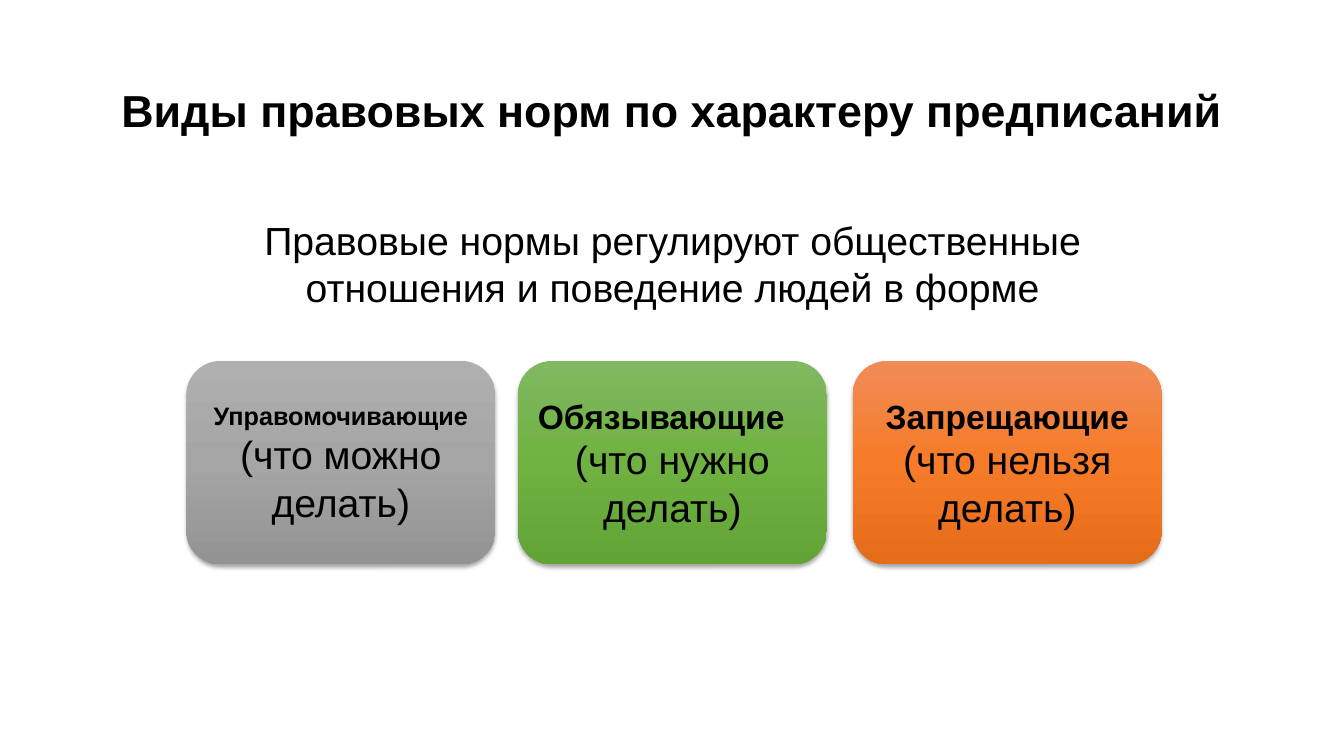
from copy import deepcopy

from lxml import etree
from pptx import Presentation
from pptx.dml.color import RGBColor
from pptx.enum.shapes import MSO_SHAPE
from pptx.enum.text import MSO_ANCHOR, MSO_AUTO_SIZE, PP_ALIGN
from pptx.oxml.ns import qn
from pptx.util import Pt

ROUNDED = MSO_SHAPE.ROUNDED_RECTANGLE
MIDDLE = MSO_ANCHOR.MIDDLE
LEFT, CENTER = PP_ALIGN.LEFT, PP_ALIGN.CENTER
FIT_SHAPE, NO_FIT = MSO_AUTO_SIZE.SHAPE_TO_FIT_TEXT, MSO_AUTO_SIZE.NONE
TITLE_ONLY = 5
FONT = "Arial"
BLACK = "000000"

CARD_TOP, CARD_WIDTH, CARD_HEIGHT = 257.8, 220.6, 145.4
# left, gradient colours, heading, heading size, heading alignment, explanation
CARDS = [
    (133.2, ("AFAFAF", "A5A5A5", "939393"),
     "Управомочивающие", 18, CENTER, "(что можно делать)"),
    (370, ("81B861", "6FB242", "62A336"),
     "Обязывающие", 24, LEFT, "(что нужно делать)"),
    (609.2, ("F18C57", "F67B28", "E56C19"),
     "Запрещающие", 24, CENTER, "(что нельзя делать)"),
]


def color(hex_value):
    return RGBColor.from_string(hex_value)


def place(sp, left, top, width, height):
    sp.left, sp.top, sp.width, sp.height = map(Pt, (left, top, width, height))


def add_run(p, text, size, bold=False, align=CENTER):
    p.alignment = align
    r = p.add_run()
    r.text = text
    r.font.name = FONT
    r.font.size = Pt(size)
    r.font.bold = bold
    r.font.color.rgb = color(BLACK)


def set_gradient(fill, hex_values):
    """Fill from top to bottom with three evenly spaced colours."""
    fill.gradient()
    fill.gradient_angle = 270
    stop_list = fill._fill._gradFill.find(qn("a:gsLst"))
    stop_list.append(deepcopy(stop_list[0]))
    for i, (stop, hex_value) in enumerate(zip(fill.gradient_stops, hex_values)):
        stop.position = i / 2
        stop.color.rgb = color(hex_value)


def add_shadow(sp):
    sp.shadow.inherit = False
    effects = sp._element.spPr.find(qn("a:effectLst"))
    shadow = etree.SubElement(
        effects, qn("a:outerShdw"), blurRad=str(Pt(3.1)), dist=str(Pt(1.8)),
        dir="5400000", rotWithShape="0")
    tint = etree.SubElement(shadow, qn("a:srgbClr"), val=BLACK)
    etree.SubElement(tint, qn("a:alpha"), val="35000")


def set_title(s, text):
    title = s.shapes.title
    place(title, 66, 28.8, 828, 104.4)
    tf = title.text_frame
    tf.vertical_anchor = MIDDLE
    tf.auto_size = NO_FIT
    p = tf.paragraphs[0]
    p.line_spacing = 0.9
    add_run(p, text, 32, bold=True)


def add_lead(s, text):
    box = s.shapes.add_textbox(Pt(142.6), Pt(151.2), Pt(675.4), Pt(74.9))
    tf = box.text_frame
    tf.word_wrap = True
    tf.auto_size = FIT_SHAPE
    add_run(tf.paragraphs[0], text, 28)


def add_card(s, left, gradient, heading, size, align, explanation):
    sp = s.shapes.add_shape(
        ROUNDED, Pt(left), Pt(CARD_TOP), Pt(CARD_WIDTH), Pt(CARD_HEIGHT))
    sp.adjustments[0] = 0.167
    set_gradient(sp.fill, gradient)
    sp.line.fill.background()
    add_shadow(sp)
    tf = sp.text_frame
    tf.word_wrap = True
    tf.vertical_anchor = MIDDLE
    add_run(tf.paragraphs[0], heading, size, bold=True, align=align)
    add_run(tf.add_paragraph(), explanation, 28)


def main():
    prs = Presentation()
    prs.slide_width, prs.slide_height = Pt(960), Pt(540)
    s = prs.slides.add_slide(prs.slide_layouts[TITLE_ONLY])
    set_title(s, "Виды правовых норм по характеру предписаний")
    add_lead(s, "Правовые нормы регулируют общественные отношения "
                "и поведение людей в форме")
    for card in CARDS:
        add_card(s, *card)
    prs.save("out.pptx")


if __name__ == "__main__":
    main()
